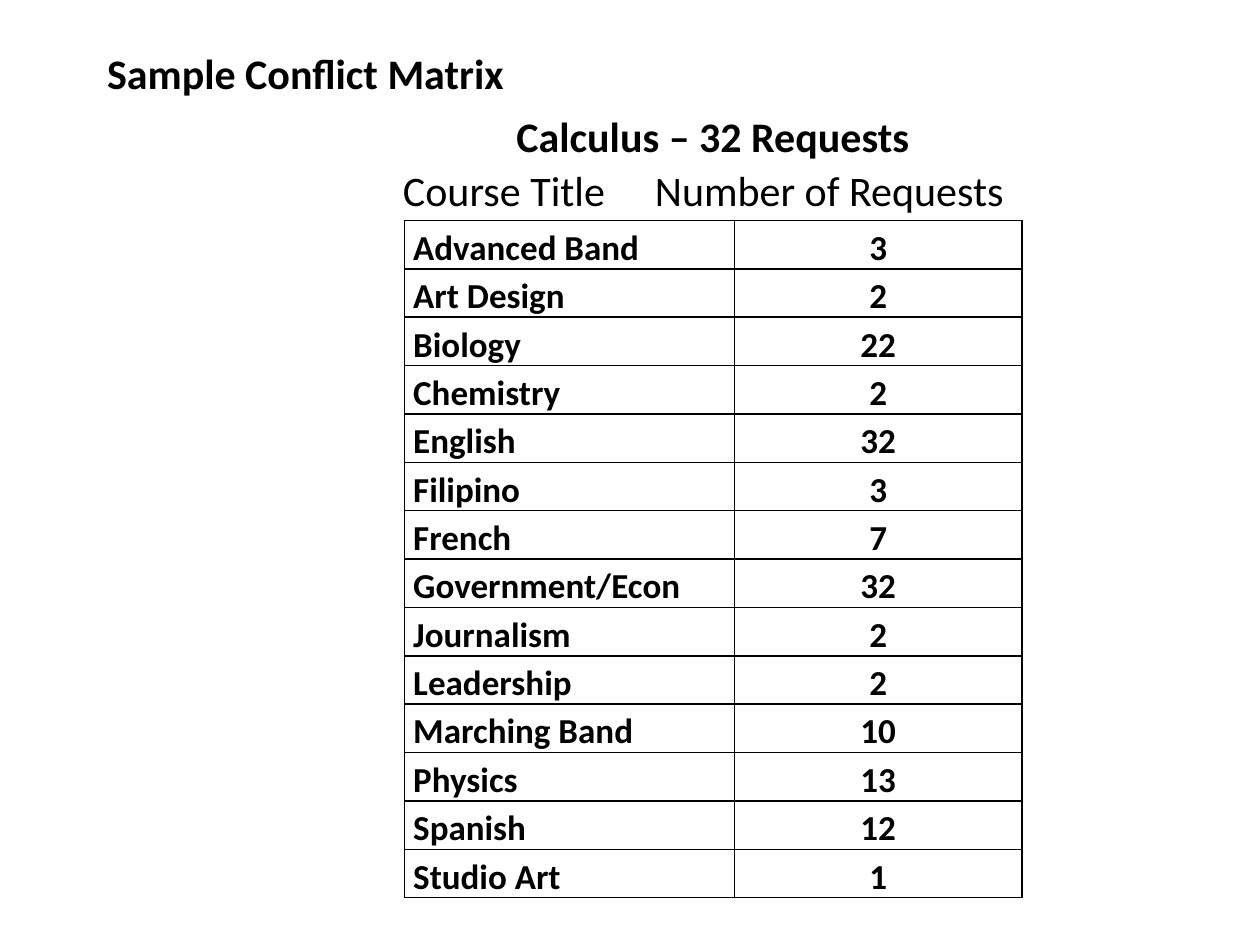
from typing import NamedTuple

from lxml import etree
from pptx import Presentation
from pptx.dml.color import RGBColor
from pptx.enum import text
from pptx.oxml import ns
from pptx.util import Inches, Pt

BLACK = "000000"
LEFT, CENTER = text.PP_ALIGN.LEFT, text.PP_ALIGN.CENTER


class Course(NamedTuple):
    title: str
    requests: int


COURSES = [
    Course("Advanced Band", 3),
    Course("Art Design", 2),
    Course("Biology", 22),
    Course("Chemistry", 2),
    Course("English", 32),
    Course("Filipino", 3),
    Course("French", 7),
    Course("Government/Econ", 32),
    Course("Journalism", 2),
    Course("Leadership", 2),
    Course("Marching Band", 10),
    Course("Physics", 13),
    Course("Spanish", 12),
    Course("Studio Art", 1),
]


def rgb(color: str) -> RGBColor:
    return RGBColor.from_string(color)


def write(frame, words: str, size: int, bold: bool = True,
          align=LEFT, spacing: float = 1.15) -> None:
    frame.text = words
    line = frame.paragraphs[0]
    line.alignment = align
    line.line_spacing = spacing
    font = line.runs[0].font
    font.name, font.size, font.bold = "Calibri", Pt(size), bold
    font.color.rgb = rgb(BLACK)


def add_heading(slide, words: str, left: float, top: float, width: float,
                height: float, bold: bool):
    box = slide.shapes.add_textbox(
        Inches(left), Inches(top), Inches(width), Inches(height))
    frame = box.text_frame
    frame.word_wrap = True
    frame.auto_size = text.MSO_AUTO_SIZE.SHAPE_TO_FIT_TEXT
    write(frame, words, 24, bold)
    return frame.paragraphs[0]


def add_borders(cell, color: str, width: float) -> None:
    properties = cell._tc.get_or_add_tcPr()
    for position, side in enumerate(("lnL", "lnR", "lnT", "lnB")):
        line = etree.Element(ns.qn(f"a:{side}"), w=str(Pt(width)))
        fill = etree.SubElement(line, ns.qn("a:solidFill"))
        etree.SubElement(fill, ns.qn("a:srgbClr"), val=color)
        properties.insert(position, line)


def format_cell(cell, words: str, align) -> None:
    cell.margin_left = cell.margin_right = Inches(0.07)
    cell.margin_top = cell.margin_bottom = 0
    cell.fill.background()
    write(cell.text_frame, words, 20, align=align)
    add_borders(cell, BLACK, 1)


def add_request_table(slide) -> None:
    table = slide.shapes.add_table(
        len(COURSES), 2, Inches(3.21), Inches(1.75),
        Inches(4.9), Inches(5.37)).table
    table.first_row = table.horz_banding = False
    for column, width in zip(table.columns, (2.62, 2.28)):
        column.width = Inches(width)
    for row, course in enumerate(COURSES):
        format_cell(table.cell(row, 0), course.title, LEFT)
        format_cell(table.cell(row, 1), str(course.requests), CENTER)


def add_title(slide, words: str) -> None:
    title = slide.shapes.title
    title.left, title.top = Inches(0.75), Inches(0.33)
    title.width, title.height = Inches(4.5), Inches(0.5)
    frame = title.text_frame
    frame.vertical_anchor = text.MSO_ANCHOR.TOP
    frame.auto_size = text.MSO_AUTO_SIZE.SHAPE_TO_FIT_TEXT
    write(frame, words, 24, spacing=1.0)


def main() -> None:
    deck = Presentation()
    deck.slide_width, deck.slide_height = Inches(10), Inches(7.5)
    slide = deck.slides.add_slide(deck.slide_layouts.get_by_name("Title Only"))

    add_title(slide, "Sample Conflict Matrix")
    add_request_table(slide)
    add_heading(slide, "Course Title\tNumber of Requests",
                3.1, 1.2, 5, 0.54, bold=False)
    subject = add_heading(slide, "Calculus – 32 Requests",
                          2, 0.77, 6.92, 0.57, bold=True)
    indents = subject._p.get_or_add_pPr()
    indents.set("marL", str(Inches(1.5)))
    indents.set("indent", str(Inches(0.5)))

    deck.save("out.pptx")


if __name__ == "__main__":
    main()
